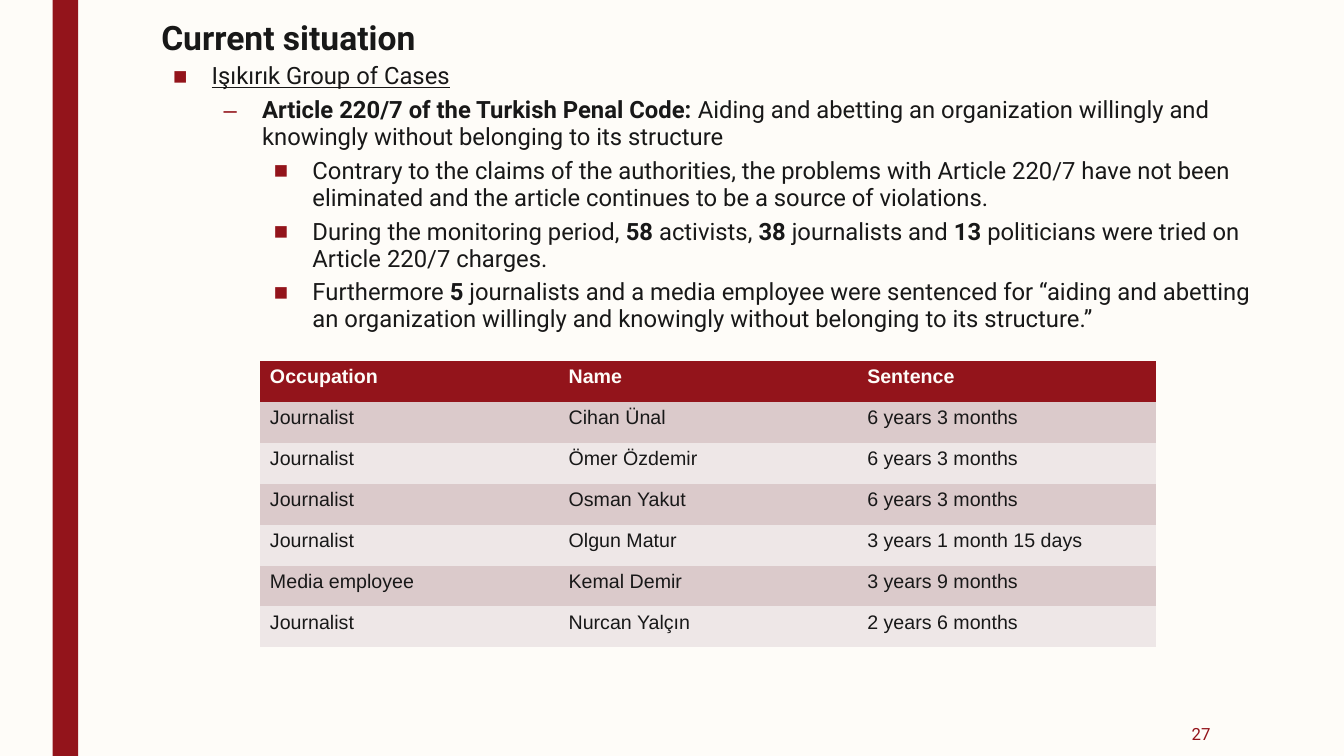
"""Build the slide on the current situation of the Işıkırık group of cases."""
from lxml import etree
from pptx import Presentation
from pptx.dml.color import RGBColor
from pptx.enum.shapes import MSO_SHAPE
from pptx.enum.text import MSO_ANCHOR, MSO_AUTO_SIZE, PP_ALIGN
from pptx.oxml.ns import qn
from pptx.util import Cm, Pt

RECTANGLE = MSO_SHAPE.RECTANGLE
TOP, MIDDLE = MSO_ANCHOR.TOP, MSO_ANCHOR.MIDDLE
NO_AUTOFIT = MSO_AUTO_SIZE.NONE
LEFT, RIGHT = PP_ALIGN.LEFT, PP_ALIGN.RIGHT

CREAM = RGBColor(0xFE, 0xFC, 0xF8)
INK = RGBColor(0x18, 0x18, 0x18)
CRIMSON = RGBColor(0x93, 0x14, 0x1B)
ROSE = RGBColor(0xDB, 0xCA, 0xCB)
PALE_ROSE = RGBColor(0xEE, 0xE7, 0xE7)

NO_TABLE_STYLE = "{2D5ABB26-0587-4C30-8999-92F81FD0307C}"
BULLETS = "■–■"

FINDINGS = [
    (0, "Işıkırık Group of Cases"),
    (1, "**Article 220/7 of the Turkish Penal Code: **Aiding and abetting an organization "
        "willingly and knowingly without belonging to its structure"),
    (2, "Contrary to the claims of the authorities, the problems with Article 220/7 have not "
        "been eliminated and the article continues to be a source of violations."),
    (2, "During the monitoring period, **58** activists, **38** journalists and **13** "
        "politicians were tried on Article 220/7 charges."),
    (2, "Furthermore **5** journalists and a media employee were sentenced for “aiding and "
        "abetting an organization willingly and knowingly without belonging to its structure.”"),
]

SENTENCES = [
    ("Occupation", "Name", "Sentence"),
    ("Journalist", "Cihan Ünal", "6 years 3 months"),
    ("Journalist", "Ömer Özdemir", "6 years 3 months"),
    ("Journalist", "Osman Yakut", "6 years 3 months"),
    ("Journalist", "Olgun Matur", "3 years 1 month 15 days"),
    ("Media employee", "Kemal Demir", "3 years 9 months"),
    ("Journalist", "Nurcan Yalçın", "2 years 6 months"),
]


class SlideBuilder:
    """Hold the style and the current slide, and add elements to it."""

    heading = {"name": "Roboto", "size": Pt(24), "bold": True}
    text = {"name": "Roboto", "size": Pt(17)}
    number = {"name": "Roboto", "size": Pt(12)}
    cell = {"name": "Arial", "size": Pt(14)}
    frame = {"word_wrap": True, "auto_size": NO_AUTOFIT}

    def __init__(self, presentation):
        """Add a slide with the cream background."""
        self.slide = presentation.slides.add_slide(presentation.slide_layouts[1])
        self.slide.background.fill.solid()
        self.slide.background.fill.fore_color.rgb = CREAM

    def apply(self, target, values):
        """Set every attribute in values on the target."""
        for key, value in values.items():
            setattr(target, key, value)

    def add_runs(self, paragraph, content, style, color, **extra):
        """Add runs to a paragraph, with bold between double asterisks."""
        for index, part in enumerate(content.split("**")):
            if part:
                run = paragraph.add_run()
                run.text = part
                emphasis = {"bold": True} if index % 2 else {}
                self.apply(run.font, {"bold": False, **style, **extra, **emphasis})
                run.font.color.rgb = color

    def place(self, shape, left, top, width, height):
        """Move and size a shape, in centimetres."""
        self.apply(shape, {"left": Cm(left), "top": Cm(top),
                           "width": Cm(width), "height": Cm(height)})

    def bar(self, *box):
        """Add a crimson bar."""
        bar = self.slide.shapes.add_shape(RECTANGLE, *map(Cm, box))
        bar.shadow.inherit = False
        bar.fill.solid()
        bar.fill.fore_color.rgb = CRIMSON
        bar.line.fill.background()

    def title(self, content, *box):
        """Fill the title placeholder."""
        title = self.slide.shapes.title
        self.place(title, *box)
        self.apply(title.text_frame, {**self.frame, "vertical_anchor": TOP})
        paragraph = title.text_frame.paragraphs[0]
        self.apply(paragraph, {"alignment": LEFT, "line_spacing": 0.89})
        self.add_runs(paragraph, content, self.heading, INK)

    def bullet(self, paragraph, level):
        """Give a paragraph the indent and bullet of its level."""
        properties = paragraph._p.get_or_add_pPr()
        properties.set("marL", str(Cm(1.27 * (level + 1))))
        properties.set("indent", str(Cm(-0.97)))
        color = etree.SubElement(properties, qn("a:buClr"))
        etree.SubElement(color, qn("a:srgbClr"), val=str(CRIMSON))
        etree.SubElement(properties, qn("a:buFont"), typeface="Arial")
        etree.SubElement(properties, qn("a:buChar"), char=BULLETS[level])

    def outline(self, items, *box):
        """Fill the body placeholder with a multilevel list."""
        body = self.slide.placeholders[1]
        self.place(body, *box)
        self.apply(body.text_frame, {**self.frame, "vertical_anchor": TOP})
        for index, (level, content) in enumerate(items):
            paragraph = body.text_frame.add_paragraph() if index else body.text_frame.paragraphs[0]
            self.bullet(paragraph, level)
            self.apply(paragraph, {"level": level, "line_spacing": 0.94,
                                   "space_before": Pt(5 if index else 0)})
            self.add_runs(paragraph, content, self.text, INK, underline=level == 0)

    def table(self, rows, *box):
        """Add a banded table with a crimson header."""
        table = self.slide.shapes.add_table(len(rows), len(rows[0]), *map(Cm, box)).table
        table._tbl.tblPr.find(qn("a:tableStyleId")).text = NO_TABLE_STYLE
        table.horz_banding = False
        for row_index, row in enumerate(rows):
            header = row_index == 0
            band = CRIMSON if header else (PALE_ROSE, ROSE)[row_index % 2]
            for column_index, content in enumerate(row):
                cell = table.cell(row_index, column_index)
                cell.fill.solid()
                cell.fill.fore_color.rgb = band
                self.add_runs(cell.text_frame.paragraphs[0], content, self.cell,
                              CREAM if header else INK, bold=header)

    def page_number(self, content, *box):
        """Add the slide number."""
        page = self.slide.shapes.add_textbox(*map(Cm, box)).text_frame
        self.apply(page, {**self.frame, "vertical_anchor": MIDDLE})
        page.paragraphs[0].alignment = RIGHT
        self.add_runs(page.paragraphs[0], content, self.number, CRIMSON)


def main():
    """Build and save the presentation."""
    presentation = Presentation()
    presentation.slide_width, presentation.slide_height = Cm(33.87), Cm(19.05)
    builder = SlideBuilder(presentation)
    builder.bar(1.33, 0, 0.64, 19.05)
    builder.title("Current situation", 3.81, 0.43, 26.67, 1.47)
    builder.outline(FINDINGS, 3.81, 1.47, 28.02, 13.77)
    builder.page_number("27", 26.31, 17.93, 4.45, 1.12)
    builder.table(SENTENCES, 6.55, 9.1, 22.58, 7.21)
    presentation.save("out.pptx")


if __name__ == "__main__":
    main()
